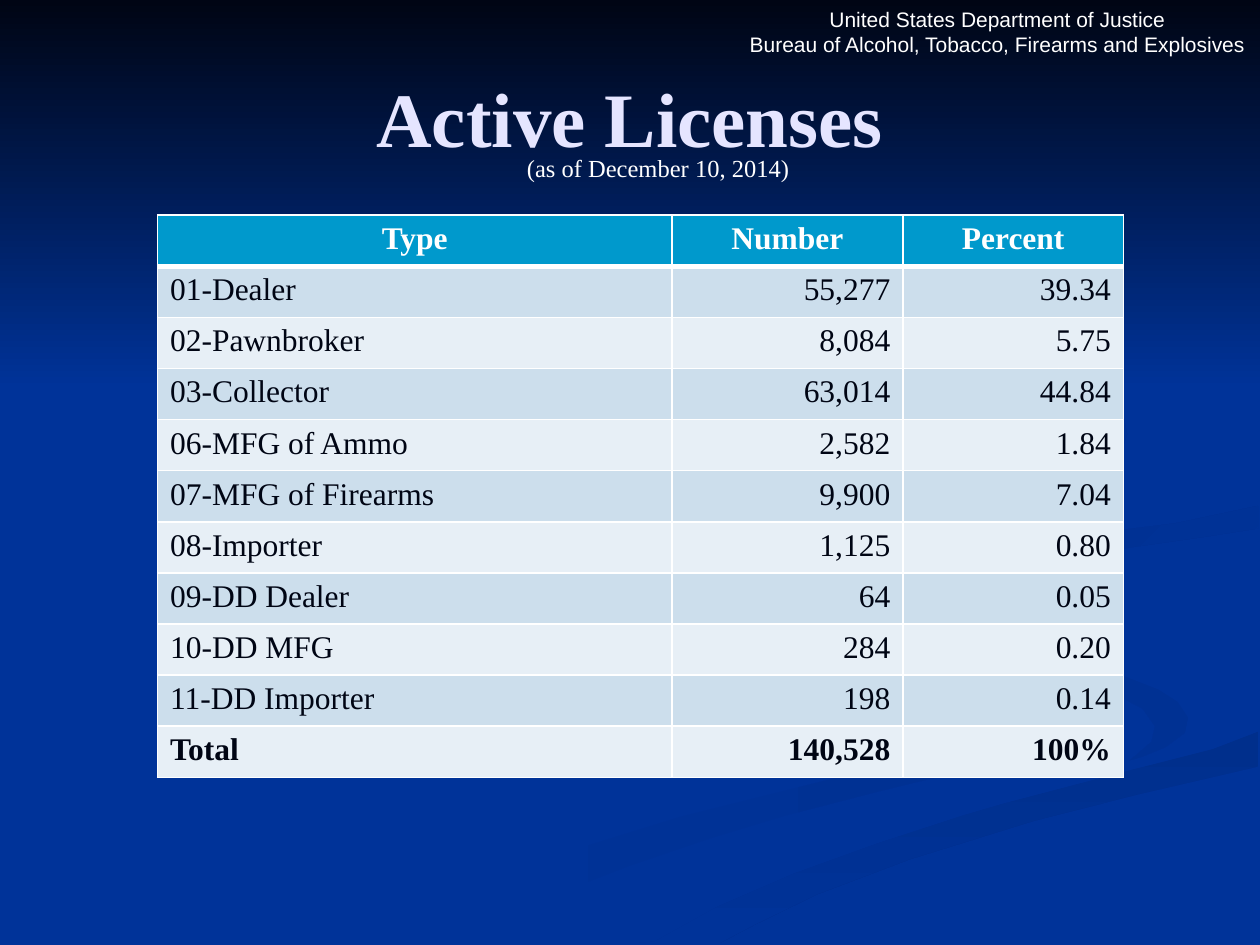
from lxml import etree
from pptx import Presentation
from pptx.dml.color import RGBColor
from pptx.enum.text import MSO_ANCHOR, PP_ALIGN
from pptx.oxml.ns import qn
from pptx.util import Pt

LEFT, CENTER, RIGHT = PP_ALIGN.LEFT, PP_ALIGN.CENTER, PP_ALIGN.RIGHT
TOP, MIDDLE, BOTTOM = MSO_ANCHOR.TOP, MSO_ANCHOR.MIDDLE, MSO_ANCHOR.BOTTOM
SERIF, SANS = "Times New Roman", "Arial"
BLUE, NIGHT, WHITE, LAVENDER = "003399", "000514", "FFFFFF", "E5E5FF"
HEADER_FILL, BAND_FILLS = "0099CC", ("CCDEEC", "E7EFF6")
BLANK_LAYOUT = 6

LICENSES = [
    ("Type", "Number", "Percent"),
    ("01-Dealer", "55,277", "39.34"),
    ("02-Pawnbroker", "8,084", "5.75"),
    ("03-Collector", "63,014", "44.84"),
    ("06-MFG of Ammo", "2,582", "1.84"),
    ("07-MFG of Firearms", "9,900", "7.04"),
    ("08-Importer", "1,125", "0.80"),
    ("09-DD Dealer", "64", "0.05"),
    ("10-DD MFG", "284", "0.20"),
    ("11-DD Importer", "198", "0.14"),
    ("Total", "140,528", "100%"),
]
COLUMN_WIDTHS = (294, 132, 126)
ROW_HEIGHT = 29.2

LOWER_SWOOSH = [
    (562, 398), (545, 391), (515, 380), (476, 369), (442, 357), (423, 346), (414, 336),
    (414, 330), (410, 338), (415, 346), (427, 354), (454, 364), (489, 374), (524, 385),
    (549, 394), (562, 400), (566, 408), (562, 417), (546, 425), (523, 433), (492, 441),
    (444, 453), (388, 467), (330, 485), (271, 509), (216, 539), (260, 539), (310, 514),
    (359, 495), (406, 479), (449, 466), (503, 452), (544, 442), (566, 433), (574, 423),
    (576, 418), (572, 408)]
CURL = [
    (679, 410), (673, 401), (662, 394), (639, 385), (612, 377), (570, 366), (546, 359),
    (528, 348), (521, 334), (522, 341), (528, 351), (544, 364), (574, 377), (603, 386),
    (634, 395), (653, 405), (660, 415), (658, 424), (644, 436), (666, 427), (678, 418)]
DARK_BAND = [
    (374, 538), (362, 539), (411, 539), (432, 528), (467, 511), (520, 491), (591, 469),
    (650, 454), (719, 438), (719, 418), (693, 428), (650, 439), (574, 459), (550, 466),
    (501, 482), (454, 499), (410, 518)]
BROAD_RIBBON = [
    (521, 334), (528, 348), (546, 359), (570, 366), (612, 377), (639, 385), (662, 394),
    (673, 401), (679, 410), (677, 420), (662, 430), (634, 438), (585, 450), (535, 463),
    (477, 481), (413, 506), (343, 539), (362, 539), (374, 538), (410, 518), (454, 499),
    (501, 482), (550, 466), (574, 459), (650, 439), (693, 428), (719, 418), (719, 387),
    (678, 379), (624, 366), (588, 354), (566, 341), (562, 333), (570, 322), (592, 312),
    (623, 305), (672, 299), (719, 289), (719, 279), (678, 287), (629, 294), (582, 300),
    (544, 311), (526, 323)]
SIDE_RIBBON = [
    (562, 331), (563, 338), (574, 348), (595, 357), (582, 348), (580, 340), (588, 330),
    (607, 323), (645, 313), (687, 307), (719, 302), (719, 289), (672, 299), (623, 305),
    (592, 312), (570, 322)]
UPPER_SWOOSH = [
    (492, 310), (532, 303), (566, 297), (594, 289), (616, 282), (631, 272), (640, 261),
    (644, 248), (641, 233), (629, 215), (607, 198), (575, 180), (549, 168), (580, 183),
    (609, 201), (626, 215), (637, 230), (640, 241), (635, 255), (620, 266), (598, 275),
    (549, 287), (487, 298), (450, 307), (424, 318), (415, 333), (425, 348), (448, 360),
    (433, 349), (427, 338), (433, 328), (449, 320), (467, 314)]
SKY = [(0, 0), (0, 222), (720, 222), (720, 0)]

BACKDROP = [
    (LOWER_SWOOSH, BLUE, "003193", 0),
    (CURL, BLUE, "003193", 45),
    (DARK_BAND, "002F8C", BLUE, 90),
    (BROAD_RIBBON, BLUE, BLUE, 0),
    (SIDE_RIBBON, "003091", BLUE, 45),
    (UPPER_SWOOSH, "002F8E", BLUE, 45),
    (SKY, NIGHT, BLUE, 90),
]


def color(value):
    """Turn a hex string into a colour."""
    return RGBColor.from_string(value)


def paint(fill, value):
    """Give a fill one solid colour."""
    fill.solid()
    fill.fore_color.rgb = color(value)


def add_outline(page, points, start, end, angle):
    """Draw a closed outline whose colour runs from start to end, angle clockwise."""
    builder = page.shapes.build_freeform(*points[0], scale=Pt(1))
    builder.add_line_segments(points[1:], close=True)
    shape = builder.convert_to_shape()
    shape.shadow.inherit = False
    shape.line.fill.background()
    if start == end:
        paint(shape.fill, start)
        return
    shape.fill.gradient()
    shape.fill.gradient_angle = -angle % 360
    for stop, value, position in zip(shape.fill.gradient_stops, (start, end), (0, 1)):
        stop.color.rgb = color(value)
        stop.position = position


def write(para, text, align, value, **font):
    """Write one run in a paragraph with the given font values."""
    para.alignment = align
    span = para.add_run()
    span.text = text
    span.font.color.rgb = color(value)
    for name, setting in font.items():
        setattr(span.font, name, setting)


def add_text(page, place, lines, align, anchor, value, **font):
    """Add a text box with one paragraph for each line."""
    frame = page.shapes.add_textbox(*map(Pt, place)).text_frame
    frame.word_wrap = True
    frame.vertical_anchor = anchor
    for index, line in enumerate(lines):
        para = frame.add_paragraph() if index else frame.paragraphs[0]
        write(para, line, align, value, **font)


def add_borders(cell, **widths):
    """Give a cell white borders with a width for each side."""
    properties = cell._tc.get_or_add_tcPr()
    for index, (side, width) in enumerate(widths.items()):
        line = etree.Element(qn(f"a:ln{side}"), w=str(Pt(width)))
        fill = etree.SubElement(line, qn("a:solidFill"))
        etree.SubElement(fill, qn("a:srgbClr"), val=WHITE)
        properties.insert(index, line)


def add_license_table(page, left, top):
    """Add the banded table of licenses with a header and a bold total."""
    last = len(LICENSES) - 1
    size = sum(COLUMN_WIDTHS), ROW_HEIGHT * len(LICENSES)
    table = page.shapes.add_table(
        len(LICENSES), len(COLUMN_WIDTHS), *map(Pt, (left, top, *size))).table
    table.first_row = table.horz_banding = False
    for column, width in zip(table.columns, COLUMN_WIDTHS):
        column.width = Pt(width)
    for row, entries in enumerate(LICENSES):
        table.rows[row].height = Pt(ROW_HEIGHT)
        header = row == 0
        for column, text in enumerate(entries):
            cell = table.cell(row, column)
            paint(cell.fill, HEADER_FILL if header else BAND_FILLS[(row - 1) % 2])
            add_borders(cell, L=1, R=1, T=3 if row == 1 else 1, B=3 if header else 1)
            align = CENTER if header else RIGHT if column else LEFT
            write(cell.text_frame.paragraphs[0], text, align, WHITE if header else NIGHT,
                  name=SERIF, size=Pt(18), bold=row in (0, last))


def main():
    """Build the slide and save it."""
    deck = Presentation()
    deck.slide_width, deck.slide_height = Pt(720), Pt(540)
    page = deck.slides.add_slide(deck.slide_layouts[BLANK_LAYOUT])
    paint(page.background.fill, BLUE)
    for outline in BACKDROP:
        add_outline(page, *outline)
    add_text(page, (420, 4.3, 300, 31.7),
             ["United States Department of Justice",
              "Bureau of Alcohol, Tobacco, Firearms and Explosives"],
             CENTER, BOTTOM, WHITE, name=SANS, size=Pt(12))
    add_text(page, (36, 21.6, 648, 90), ["Active Licenses"],
             CENTER, MIDDLE, LAVENDER, name=SERIF, size=Pt(44), bold=True)
    add_license_table(page, 90, 123)
    add_text(page, (294, 84, 174, 24.5), ["(as of December 10, 2014)"],
             LEFT, TOP, WHITE, name=SERIF, size=Pt(14))
    deck.save("out.pptx")


if __name__ == "__main__":
    main()
